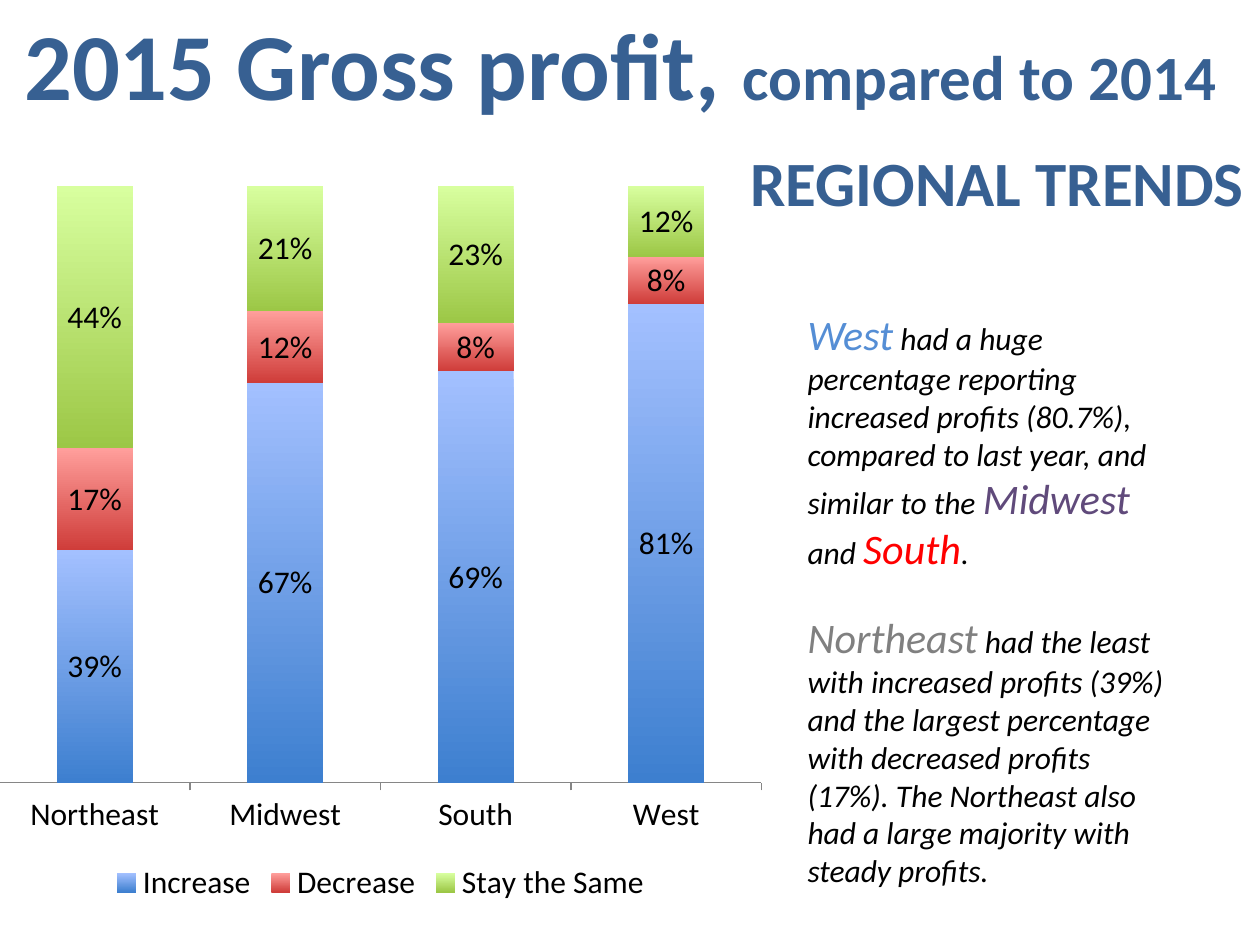
from lxml.etree import SubElement
from pptx import Presentation
from pptx.chart.data import CategoryChartData
from pptx.dml.color import RGBColor
from pptx.enum.chart import XL_CHART_TYPE, XL_LABEL_POSITION, XL_LEGEND_POSITION, XL_TICK_MARK
from pptx.enum.text import MSO_AUTO_SIZE, PP_ALIGN
from pptx.oxml import parse_xml
from pptx.oxml.ns import nsdecls, qn
from pptx.util import Cm, Pt

HUES = {
    "navy": "376092", "halo": "FEFEFE", "black": "000000", "axis": "868686",
    "west": "558ED5", "mid": "604A7B", "south": "FF0000", "north": "808080",
    "up_top": "A3C0FF", "up_low": "3D7FCF",
    "down_top": "FF9E9B", "down_low": "CF3D3A",
    "same_top": "D8FF9F", "same_low": "9CC746",
}
FACE = "Calibri"
HEAD = {"name": FACE, "bold": True, "italic": False}
BODY = {"name": FACE, "bold": False, "italic": True}
PLAIN = {"name": FACE, "size": Pt(18), "bold": False}
REGIONS = ["Northeast", "Midwest", "South", "West"]
SERIES = [
    ("Increase", [0.39, 0.67, 0.69, 0.81], "up"),
    ("Decrease", [0.17, 0.12, 0.08, 0.08], "down"),
    ("Stay the Same", [0.44, 0.21, 0.23, 0.12], "same"),
]
NOTES = [
    [("West", 24, "west"),
     (" had a huge percentage reporting increased profits (80.7%), "
      "compared to last year, and similar to the ", 18, "black"),
     ("Midwest", 24, "mid"), (" and ", 18, "black"),
     ("South", 24, "south"), (".", 18, "black")],
    [("Northeast", 24, "north"),
     (" had the least with increased profits (39%) and the largest "
      "percentage with decreased profits (17%). The Northeast also had "
      "a large majority with steady profits.", 18, "black")],
]


def hue(key):
    return RGBColor.from_string(HUES[key])


def style(item, form):
    for key, val in form.items():
        setattr(item, key, val)


def ink(font, form, key):
    style(font, form)
    font.color.rgb = hue(key)


def halo(run):
    line = parse_xml(
        f'<a:ln {nsdecls("a")} w="19050"><a:solidFill>'
        f'<a:srgbClr val="{HUES["halo"]}"/></a:solidFill></a:ln>')
    run.font._element.insert(0, line)


def write(slide, box, paras, form, align, wrap=True, gap=0, rim=False):
    frame = slide.shapes.add_textbox(*map(Cm, box)).text_frame
    style(frame, {"word_wrap": wrap, "auto_size": MSO_AUTO_SIZE.SHAPE_TO_FIT_TEXT})
    for num, parts in enumerate(paras):
        para = frame.add_paragraph() if num else frame.paragraphs[0]
        style(para, {"alignment": align, "space_before": Pt(gap if num else 0)})
        for text, size, key in parts:
            run = para.add_run()
            run.text = text
            ink(run.font, {**form, "size": Pt(size)}, key)
            if rim:
                halo(run)


def title(slide, box):
    parts = [("2015 Gross profit, ", 54, "navy"), ("compared to 2014", 36, "navy")]
    write(slide, box, [parts], HEAD, PP_ALIGN.CENTER, rim=True)


def label(slide, box):
    parts = [("REGIONAL TRENDS", 36, "navy")]
    write(slide, box, [parts], HEAD, PP_ALIGN.CENTER, wrap=False, rim=True)


def notes(slide, box):
    write(slide, box, NOTES, BODY, PP_ALIGN.LEFT, gap=22)


def place(chart, spots):
    area = chart._chartSpace.chart.plotArea
    for old in area.findall(qn("c:layout")):
        area.remove(old)
    lay = parse_xml(f'<c:layout {nsdecls("c")}><c:manualLayout/></c:layout>')
    for tag, val in spots.items():
        SubElement(lay[0], qn(f"c:{tag}")).set("val", str(val))
    area.insert(0, lay)


def shade(fill, key):
    fill.gradient()
    fill.gradient_angle = 270
    for stop, end in zip(fill.gradient_stops, ("top", "low")):
        stop.color.rgb = hue(f"{key}_{end}")


def graph(slide, box):
    data = CategoryChartData(number_format="0%")
    data.categories = REGIONS
    for name, vals, _ in SERIES:
        data.add_series(name, vals)
    chart = slide.shapes.add_chart(
        XL_CHART_TYPE.COLUMN_STACKED_100, *map(Cm, box), data).chart
    style(chart, {"has_title": False, "has_legend": True})
    ink(chart.font, {**PLAIN, "size": Pt(10)}, "black")
    style(chart.legend, {"position": XL_LEGEND_POSITION.BOTTOM, "include_in_layout": False})
    ink(chart.legend.font, PLAIN, "black")
    style(chart.value_axis, {"visible": False, "has_major_gridlines": False,
                             "minimum_scale": 0, "maximum_scale": 1})
    base = chart.category_axis
    style(base, {"major_tick_mark": XL_TICK_MARK.OUTSIDE, "has_major_gridlines": False})
    ink(base.tick_labels.font, PLAIN, "black")
    base.format.line.color.rgb = hue("axis")
    plot = chart.plots[0]
    style(plot, {"gap_width": 150, "overlap": 100, "vary_by_categories": False})
    for bar, (_, _, key) in zip(plot.series, SERIES):
        shade(bar.format.fill, key)
        bar.format.line.fill.background()
        tags = bar.data_labels
        style(tags, {"show_value": True, "number_format": "0%",
                     "number_format_is_linked": False,
                     "position": XL_LABEL_POSITION.CENTER})
        ink(tags.font, PLAIN, "black")
    place(chart, {"layoutTarget": "inner", "xMode": "edge", "yMode": "edge",
                  "x": 0.02, "y": 0.02, "w": 0.96, "h": 0.81})


def main():
    deck = Presentation()
    style(deck, {"slide_width": Cm(25.4), "slide_height": Cm(19.05)})
    slide = deck.slides.add_slide(deck.slide_layouts[6])
    label(slide, (14.81, 2.77, 10.59, 1.8))
    title(slide, (-4.19, 0, 33.4, 2.57))
    graph(slide, (-0.33, 3.45, 16, 14.86))
    notes(slide, (16.03, 6.1, 7.95, 12.07))
    deck.save("out.pptx")


if __name__ == "__main__":
    main()
